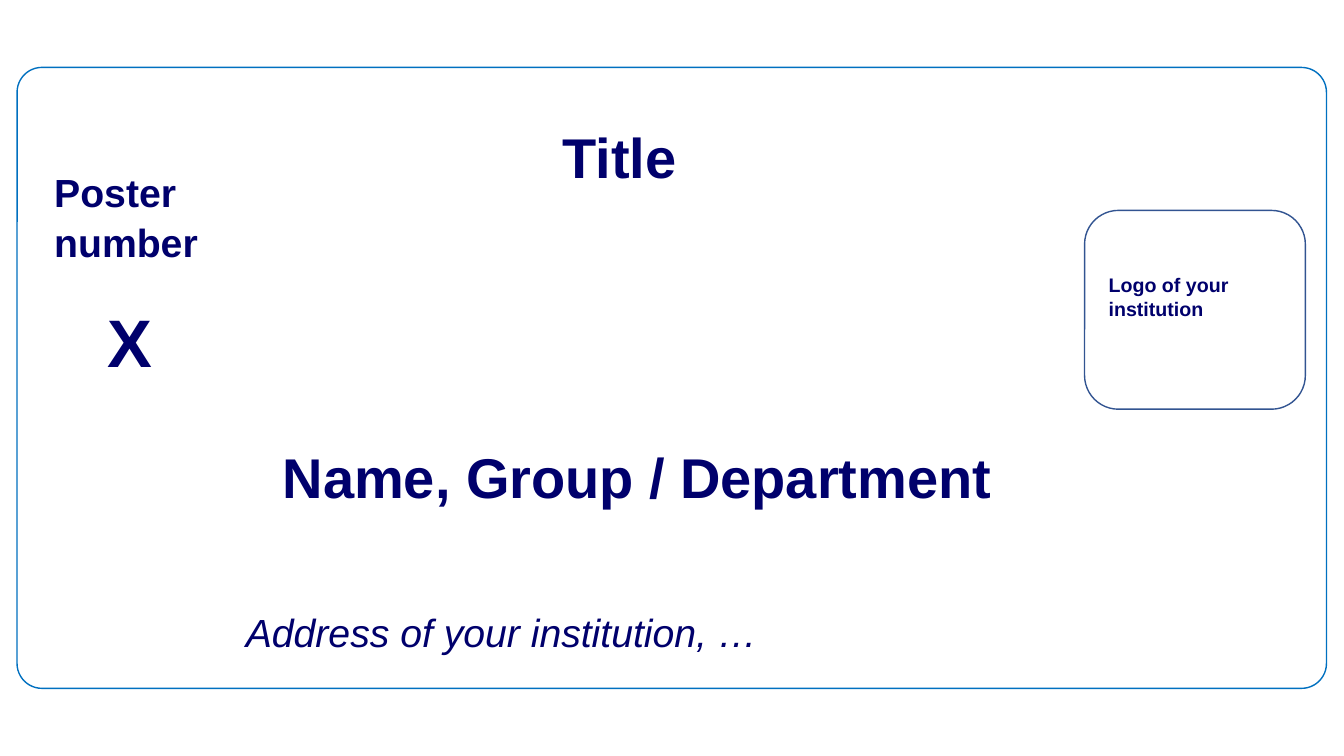
from dataclasses import dataclass

from pptx import Presentation
from pptx.dml.color import RGBColor
from pptx.enum import shapes, text
from pptx.util import Pt

COLOURS = {"navy": "00006C", "frame": "0070C0", "logo": "325491"}
FONT = "Arial"


@dataclass
class Area:
    left: float
    top: float
    width: float
    height: float

    def lengths(self) -> tuple:
        return Pt(self.left), Pt(self.top), Pt(self.width), Pt(self.height)


@dataclass
class Outline:
    area: Area
    colour: str
    rounding: float


@dataclass
class Label:
    area: Area
    paragraphs: list
    wrap: bool = True
    anchor: text.MSO_ANCHOR = text.MSO_ANCHOR.TOP


def line(content: str, *, size: float, bold: bool = True, italic: bool = False,
         centred: bool = False, spacing: float = 1, before: float = 0,
         hanging: float = 0) -> dict:
    """Describe one paragraph and its format."""
    return dict(content=content, size=size, bold=bold, italic=italic, centred=centred,
                spacing=spacing, before=before, hanging=hanging)


def add_paragraph(para, *, content: str, size: float, bold: bool, italic: bool,
                  centred: bool, spacing: float, before: float, hanging: float) -> None:
    para.alignment = text.PP_ALIGN.CENTER if centred else text.PP_ALIGN.LEFT
    para.line_spacing = spacing
    para.space_before = Pt(before)
    if hanging:
        properties = para._p.get_or_add_pPr()
        properties.set("marL", str(Pt(hanging)))
        properties.set("indent", str(-Pt(hanging)))
    span = para.add_run()
    span.text = content
    span.font.name = FONT
    span.font.size = Pt(size)
    span.font.bold = bold
    span.font.italic = italic
    span.font.color.rgb = RGBColor.from_string(COLOURS["navy"])


def add_outline(page, outline: Outline) -> None:
    box = page.shapes.add_shape(shapes.MSO_SHAPE.ROUNDED_RECTANGLE, *outline.area.lengths())
    box.adjustments[0] = outline.rounding
    box.shadow.inherit = False
    box.fill.background()
    box.line.color.rgb = RGBColor.from_string(COLOURS[outline.colour])
    box.line.width = Pt(1)


def add_label(page, label: Label) -> None:
    frame = page.shapes.add_textbox(*label.area.lengths()).text_frame
    frame.word_wrap = label.wrap
    frame.auto_size = text.MSO_AUTO_SIZE.SHAPE_TO_FIT_TEXT
    frame.vertical_anchor = label.anchor
    for index, paragraph in enumerate(label.paragraphs):
        para = frame.add_paragraph() if index else frame.paragraphs[0]
        add_paragraph(para, **paragraph)


MIDDLE = text.MSO_ANCHOR.MIDDLE

# Card frame and logo area
OUTLINES = [
    Outline(Area(12.2, 48.2, 935.3, 443.5), "frame", 0.04),
    Outline(Area(774.7, 150.3, 157.7, 142), "logo", 0.17),
]

# Wording
LABELS = [
    Label(Area(393.8, 84.2, 97.2, 55.4), [line("Title", size=40, centred=True)], wrap=False),
    Label(Area(31.7, 115.2, 122.4, 154.8), [
        line("Poster number", size=28, spacing=1.05),
        line("X", size=48, centred=True, spacing=1.05, before=22),
    ]),
    Label(Area(-147.6, 286.6, 1205.3, 82.8),
          [line("Name, Group / Department", size=40, centred=True, spacing=1.5)],
          anchor=MIDDLE),
    Label(Area(168.5, 424.1, 606.2, 45.4),
          [line("Address of your institution, …", size=28, bold=False, italic=True,
                spacing=1.25, hanging=27)],
          anchor=MIDDLE),
    Label(Area(784.8, 191.5, 113.8, 41), [line("Logo of your institution", size=14)]),
]


def main() -> None:
    deck = Presentation()
    deck.slide_width, deck.slide_height = Pt(960), Pt(540)
    page = deck.slides.add_slide(deck.slide_layouts[6])
    for outline in OUTLINES:
        add_outline(page, outline)
    for label in LABELS:
        add_label(page, label)
    deck.save("out.pptx")


if __name__ == "__main__":
    main()
